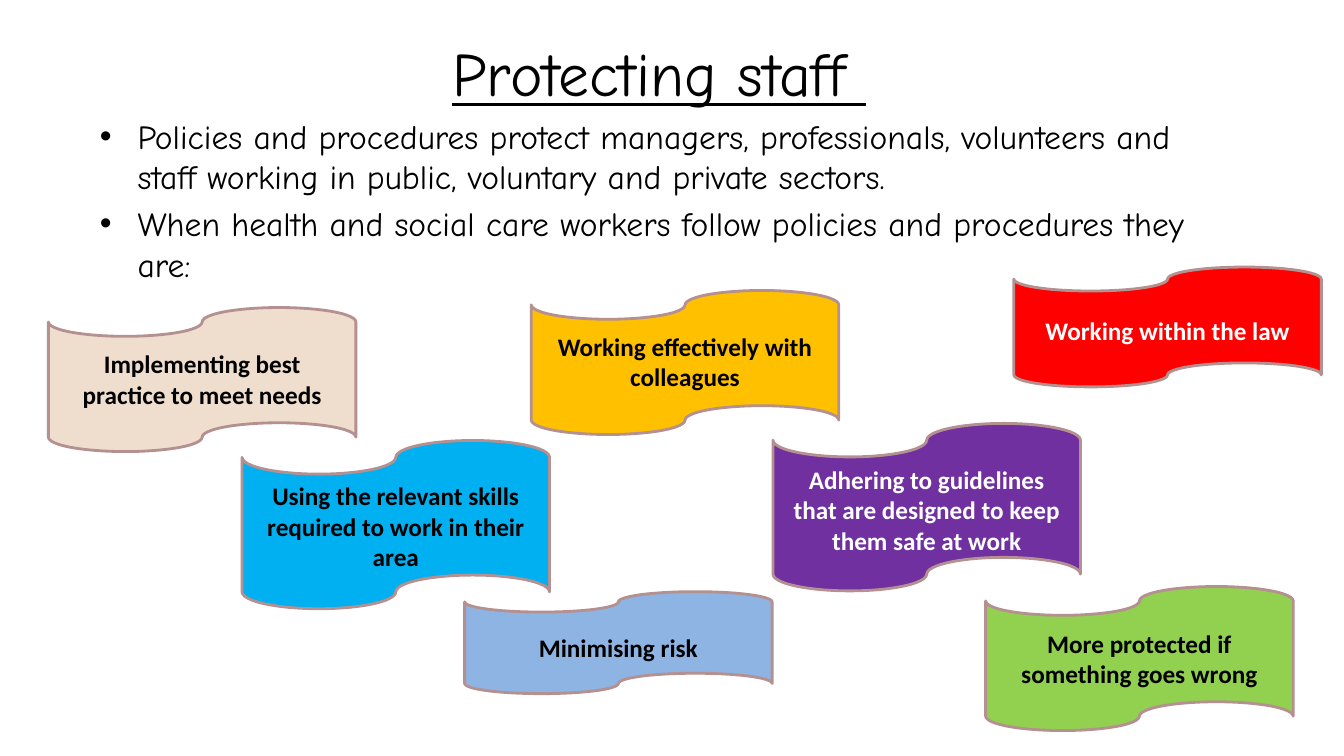
import pptx
import pptx.dml.color
import pptx.enum.shapes
import pptx.enum.text
import pptx.util

Cm = pptx.util.Cm
Pt = pptx.util.Pt
ALIGN = pptx.enum.text.PP_ALIGN
ANCHOR = pptx.enum.text.MSO_ANCHOR
AUTO_SIZE = pptx.enum.text.MSO_AUTO_SIZE

COLOURS = {
    "black": "000000",
    "white": "FFFFFF",
    "outline": "B59090",
    "beige": "EFDECD",
    "amber": "FFC000",
    "red": "FF0000",
    "blue": "00B0F0",
    "purple": "7030A0",
    "pale blue": "8EB4E3",
    "green": "92D050",
}


def colour(name):
    return pptx.dml.color.RGBColor.from_string(COLOURS[name])


def add_span(para, text, font, size, colour_name):
    span = para.add_run()
    span.text = text
    span.font.name = font
    span.font.size = Pt(size)
    span.font.color.rgb = colour(colour_name)
    return span


deck = pptx.Presentation()
deck.slide_width = Cm(33.87)
deck.slide_height = Cm(19.05)
page = deck.slides.add_slide(deck.slide_layouts[1])

title = page.shapes.title
title.left, title.top, title.width, title.height = Cm(2.01), Cm(-0.03), Cm(29.21), Cm(3.68)
title.text_frame.auto_size = AUTO_SIZE.NONE
title.text_frame.vertical_anchor = ANCHOR.MIDDLE
para = title.text_frame.paragraphs[0]
para.alignment = ALIGN.CENTER
add_span(para, "Protecting staff ", "Comic Neue", 44, "black").font.underline = True

body = page.placeholders[1]
body.left, body.top, body.width, body.height = Cm(2.26), Cm(2.79), Cm(29.21), Cm(12.09)
body.text_frame.auto_size = AUTO_SIZE.NONE
points = [
    "Policies and procedures protect managers, professionals, volunteers and staff "
    "working in public, voluntary and private sectors.",
    "When health and social care workers follow policies and procedures they are:",
]
for index, point in enumerate(points):
    para = body.text_frame.add_paragraph() if index else body.text_frame.paragraphs[0]
    para.space_before = Pt(4.8 if index else 0)
    add_span(para, point, "Comic Neue", 24, "black")

TAPE_WIDTH = 7.75
tapes = [
    ("Implementing best practice to meet needs", "beige", "black", 1.22, 7.75, 3.63, 8.66, 2, 0.24),
    ("Working effectively with colleagues", "amber", "black", 13.39, 7.32, 3.63, 8.23, 2, 0.24),
    ("Working within the law", "red", "white", 25.55, 6.73, 3.02, 7.82, 1, 0.24),
    ("Using the relevant skills required to work in their area", "blue", "black",
     6.1, 11.1, 4.24, 11.99, 3, 0),
    ("Adhering to guidelines that are designed to keep them safe at work", "purple", "white",
     19.48, 10.67, 4.22, 11.58, 3, 0.24),
    ("Minimising risk", "pale blue", "black", 11.71, 14.91, 2.57, 15.82, 1, 0.24),
    ("More protected if something goes wrong", "green", "black", 24.84, 14.78, 3.63, 15.7, 2, 0.24),
]
for text, fill, ink, left, top, height, text_top, lines, inset in tapes:
    tape = page.shapes.add_shape(
        pptx.enum.shapes.MSO_SHAPE.FLOWCHART_PUNCHED_TAPE,
        Cm(left), Cm(top), Cm(TAPE_WIDTH), Cm(height))
    tape.shadow.inherit = False
    tape.fill.solid()
    tape.fill.fore_color.rgb = colour(fill)
    tape.line.color.rgb = colour("outline")
    tape.line.width = Pt(2)

    box = page.shapes.add_textbox(
        Cm(left + inset), Cm(text_top), Cm(TAPE_WIDTH - 2 * inset), Cm(0.25 + 0.77 * lines))
    box.text_frame.word_wrap = True
    box.text_frame.auto_size = AUTO_SIZE.SHAPE_TO_FIT_TEXT
    para = box.text_frame.paragraphs[0]
    para.alignment = ALIGN.CENTER
    add_span(para, text, "Calibri", 18, ink).font.bold = True

deck.save("out.pptx")
